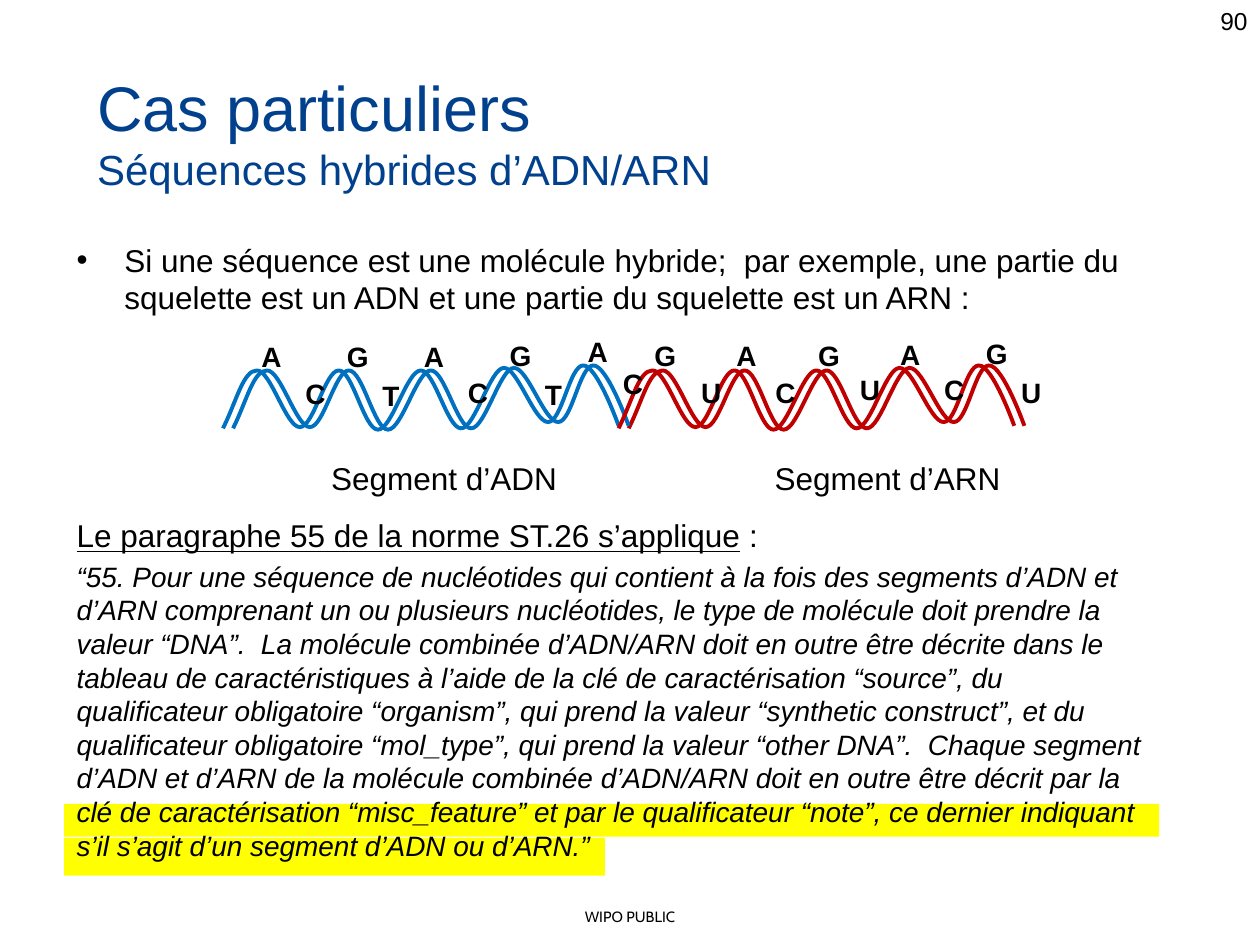
from lxml import etree
from pptx import Presentation, util as u
from pptx.dml.color import RGBColor
from pptx.enum import shapes, text
from pptx.oxml.ns import qn

BLACK = RGBColor(0x00, 0x00, 0x00)
NAVY = RGBColor(0x00, 0x40, 0x8C)
BLUE = RGBColor(0x00, 0x70, 0xC0)
RED = RGBColor(0xC0, 0x00, 0x00)
YELLOW = RGBColor(0xFF, 0xFF, 0x00)
COLUMNS, ROWS = 10, 7.5
LEFT, CENTER, RIGHT = text.PP_ALIGN.LEFT, text.PP_ALIGN.CENTER, text.PP_ALIGN.RIGHT
TOP, MIDDLE = text.MSO_ANCHOR.TOP, text.MSO_ANCHOR.MIDDLE

WAVE = [(0, 3.4), (0.27, 2.94), (0.61, 3.39), (0.92, 2.94), (1.23, 3.41), (1.57, 2.94),
        (1.89, 3.4), (2.23, 2.92), (2.58, 3.35), (2.86, 2.9), (3.14, 3.38)]
STRANDS = [(4.99, RED), (1.77, BLUE), (1.85, BLUE), (4.91, RED)]
BASES = "ACGTACGTACGUACGUACGU"
BASE_LEFTS = [1.93, 2.28, 2.61, 2.89, 3.22, 3.57, 3.9, 4.18, 4.52, 4.8,
              5.05, 5.42, 5.7, 6.01, 6.35, 6.68, 7, 7.35, 7.68, 7.96]
BASE_TOPS = [2.57, 2.86, 2.57, 2.88, 2.57, 2.85, 2.56, 2.87, 2.53, 2.78,
             2.56, 2.85, 2.56, 2.85, 2.56, 2.83, 2.55, 2.83, 2.54, 2.85]

INTRODUCTION = ("Si une séquence est une molécule hybride;  par exemple, une partie du squelette "
                "est un ADN et une partie du squelette est un ARN :")
RULE = "Le paragraphe 55 de la norme ST.26 s’applique"
QUOTATION = (
    "“55. Pour une séquence de nucléotides qui contient à la fois des segments d’ADN et d’ARN "
    "comprenant un ou plusieurs nucléotides, le type de molécule doit prendre la valeur “DNA”.  "
    "La molécule combinée d’ADN/ARN doit en outre être décrite dans le tableau de "
    "caractéristiques à l’aide de la clé de caractérisation “source”, du qualificateur "
    "obligatoire “organism”, qui prend la valeur “synthetic construct”, et du qualificateur "
    "obligatoire “mol_type”, qui prend la valeur “other DNA”.  Chaque segment d’ADN et d’ARN de "
    "la molécule combinée d’ADN/ARN doit en outre être décrit par la clé de caractérisation "
    "“misc_feature” et par le qualificateur “note”, ce dernier indiquant s’il s’agit d’un "
    "segment d’ADN ou d’ARN.”")


def write(paragraph, words, size=18, color=BLACK, font="Arial", align=LEFT, before=0,
          line=None, bold=False, italic=False, underline=False):
    paragraph.alignment = align
    paragraph.space_before = u.Pt(before)
    if line:
        paragraph.line_spacing = u.Pt(line)
    run = paragraph.add_run()
    run.text = words
    run.font.name, run.font.size = font, u.Pt(size)
    run.font.bold, run.font.italic, run.font.underline = bold, italic, underline
    run.font.color.rgb = color


def wave_points(knots, handle=0.11):
    points = [knots[0]]
    last = len(knots) - 2
    for index, ((x0, y0), (x1, y1)) in enumerate(zip(knots, knots[1:])):
        first_control = (x0 + handle, y0 if index else y0 - 2 * handle)
        second_control = (x1 - (handle if index < last else 0), y1)
        points += [first_control, second_control, (x1, y1)]
    return points


def curve(shape):
    lines = list(shape._element.iter(qn("a:lnTo")))
    for start in range(0, len(lines), 3):
        bezier = etree.SubElement(lines[start].getparent(), qn("a:cubicBezTo"))
        for line in lines[start:start + 3]:
            bezier.append(line[0])
            line.getparent().remove(line)


class Board:
    """Holds the grid, the style and the current slide."""

    def __init__(self, presentation):
        self.column = presentation.slide_width / COLUMNS
        self.row = presentation.slide_height / ROWS
        self.slide = presentation.slides.add_slide(presentation.slide_layouts[5])

    def place(self, left, top, width, height):
        return (round(left * self.column), round(top * self.row),
                round(width * self.column), round(height * self.row))

    def title(self, area, lines):
        shape = self.slide.shapes.title
        shape.left, shape.top, shape.width, shape.height = self.place(*area)
        frame = shape.text_frame
        frame.auto_size = text.MSO_AUTO_SIZE.NONE
        frame.vertical_anchor = TOP
        frame.margin_top = u.Inches(0.07)
        for index, (words, size) in enumerate(lines):
            paragraph = frame.add_paragraph() if index else frame.paragraphs[0]
            write(paragraph, words, size=size, color=NAVY)

    def box(self, area, words, anchor=TOP, **style):
        frame = self.slide.shapes.add_textbox(*self.place(*area)).text_frame
        frame.word_wrap = True
        frame.vertical_anchor = anchor
        write(frame.paragraphs[0], words, **style)
        return frame

    def segment_labels(self, area, words, stop):
        frame = self.box(area, "\t".join(words), MIDDLE)
        properties = frame.paragraphs[0]._p.get_or_add_pPr()
        tabs = etree.SubElement(properties, qn("a:tabLst"))
        etree.SubElement(tabs, qn("a:tab"), pos=str(round(stop * self.column)), algn="l")

    def preset(self, kind, area, fill=None):
        shape = self.slide.shapes.add_shape(kind, *self.place(*area))
        shape.shadow.inherit = False
        shape.line.fill.background()
        if fill is None:
            shape.fill.background()
        else:
            shape.fill.solid()
            shape.fill.fore_color.rgb = fill
        return shape

    def highlight(self, area):
        self.preset(shapes.MSO_SHAPE.RECTANGLE, area, YELLOW)

    def base(self, letter, left, top):
        shape = self.preset(shapes.MSO_SHAPE.OVAL, (left, top, 0.31, 0.52))
        shape.text_frame.word_wrap = True
        shape.text_frame.vertical_anchor = MIDDLE
        write(shape.text_frame.paragraphs[0], letter, size=16, bold=True, align=CENTER)

    def strand(self, left, color):
        points = [((left + x) * self.column, y * self.row) for x, y in wave_points(WAVE)]
        builder = self.slide.shapes.build_freeform(*points[0])
        builder.add_line_segments(points[1:], close=False)
        shape = builder.convert_to_shape()
        curve(shape)
        shape.shadow.inherit = False
        shape.fill.background()
        shape.line.color.rgb = color
        shape.line.width = u.Pt(2.25)

    def body(self, area):
        frame = self.box(area, INTRODUCTION, line=21.6)
        properties = frame.paragraphs[0]._p.get_or_add_pPr()
        indent = round(0.38 * self.column)
        properties.set("marL", str(indent))
        properties.set("indent", str(-indent))
        etree.SubElement(properties, qn("a:buFont"), typeface="Arial")
        etree.SubElement(properties, qn("a:buChar"), char="•")
        rule = frame.add_paragraph()
        write(rule, RULE, before=114.4, line=21.6, underline=True)
        write(rule, " :", before=114.4, line=21.6)
        write(frame.add_paragraph(), QUOTATION, size=16, before=3, line=19.2, italic=True)


def main():
    presentation = Presentation()
    presentation.slide_width, presentation.slide_height = u.Inches(10), u.Inches(7.5)
    board = Board(presentation)
    board.title((0.67, 0.47, 9, 1.25),
                [("Cas particuliers", 36), ("Séquences hybrides d’ADN/ARN", 24)])
    board.box((0, 7.15, 10, 0.24), "WIPO PUBLIC", MIDDLE, size=8.5, font="Cabin", align=CENTER)
    board.highlight((0.51, 6.65, 4.29, 0.3))
    board.highlight((0.51, 6.38, 8.69, 0.26))
    board.body((0.51, 1.86, 8.74, 5.19))
    board.box((7.67, 0, 2.33, 0.52), "90", size=14, align=RIGHT)
    for left, color in STRANDS:
        board.strand(left, color)
    board.segment_labels((2.53, 3.59, 5.57, 0.4), ["Segment d’ADN", "Segment d’ARN"], 3.52)
    for letter, left, top in zip(BASES, BASE_LEFTS, BASE_TOPS):
        board.base(letter, left, top)
    presentation.save("out.pptx")


if __name__ == "__main__":
    main()
